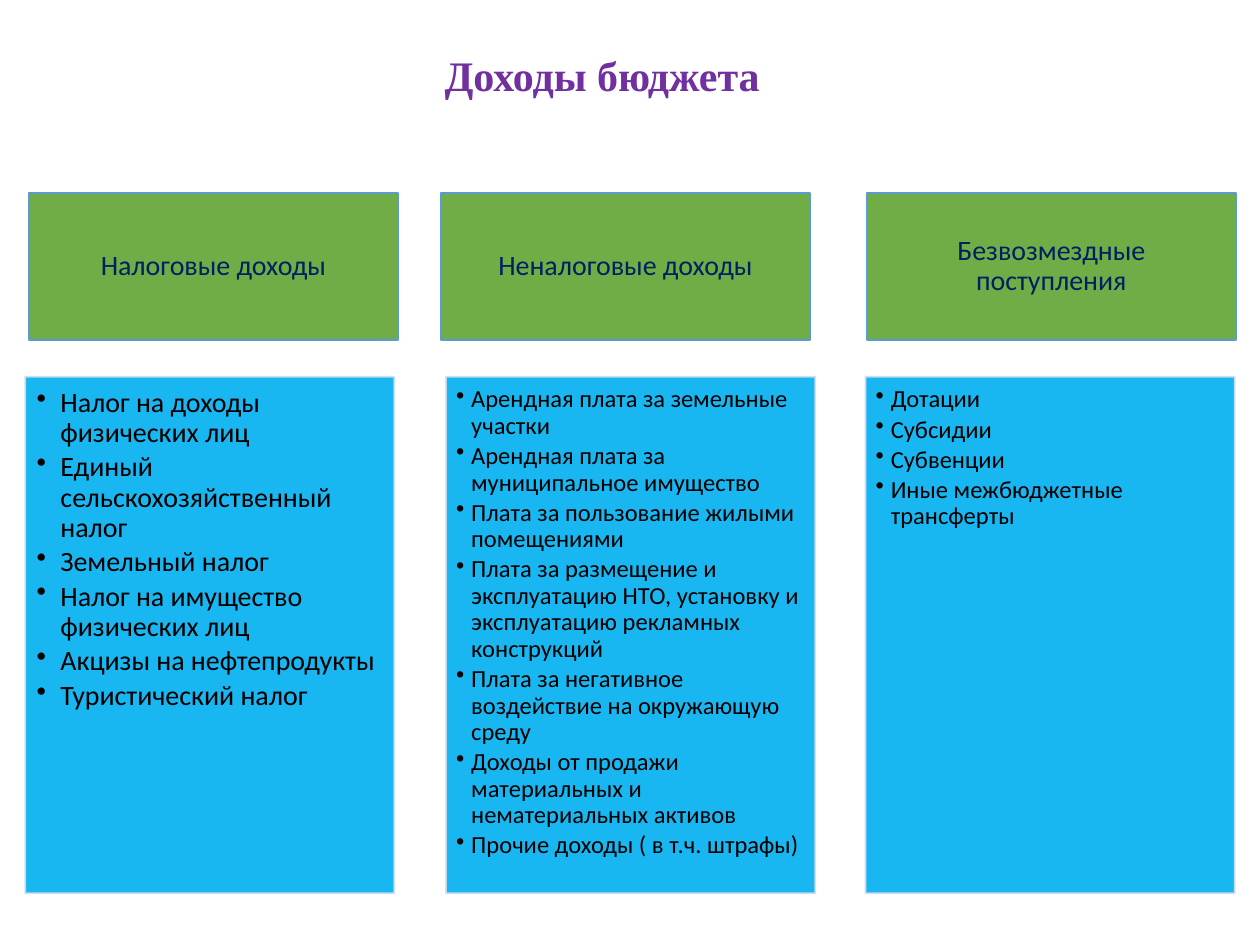
from dataclasses import dataclass

from lxml import etree
from pptx import Presentation
from pptx import util as u
from pptx.dml.color import RGBColor
from pptx.enum import shapes, text
from pptx.oxml import ns

HUES = {
    "title": "7030A0",
    "head": "70AD47",
    "edge": "5B9BD5",
    "label": "002060",
    "body": "00B0F0",
    "rim": "D2DEEF",
    "ink": "000000",
}
WIDTH = 2.93


@dataclass
class Column:
    head: str
    left: float
    inset: float
    items: list[str]
    size: int = 14
    hang: float = 0.12
    pads: tuple = (0.08, 0.08, 0.11, 0.12)


COLUMNS = [
    Column("Налоговые доходы", 0.23, 0.2, [
        "Налог на доходы физических лиц",
        "Единый сельскохозяйственный налог",
        "Земельный налог",
        "Налог на имущество физических лиц",
        "Акцизы на нефтепродукты",
        "Туристический налог",
    ], 16, 0.19, (0.09, 0.09, 0.12, 0.14)),
    Column("Неналоговые доходы", 3.5, 3.54, [
        "Арендная плата за земельные участки",
        "Арендная плата за муниципальное имущество",
        "Плата за пользование жилыми помещениями",
        "Плата за размещение и эксплуатацию НТО, установку и "
        "эксплуатацию рекламных конструкций",
        "Плата за негативное воздействие на окружающую среду",
        "Доходы от продажи материальных и нематериальных активов",
        "Прочие доходы ( в т.ч. штрафы)",
    ]),
    Column("Безвозмездные поступления", 6.88, 6.87, [
        "Дотации",
        "Субсидии",
        "Субвенции",
        "Иные межбюджетные трансферты",
    ]),
]


def tint(key: str) -> RGBColor:
    return RGBColor.from_string(HUES[key])


def style(para, face: str, size: int, hue: str, bold: bool = False) -> None:
    for run in para.runs:
        font = run.font
        font.name, font.size, font.bold = face, u.Pt(size), bold
        font.color.rgb = tint(hue)


def fade(shape) -> None:
    for color in shape._element.spPr.iter(ns.qn("a:srgbClr")):
        etree.SubElement(color, ns.qn("a:alpha"), val="90000")


def bullet(para, hang: float) -> None:
    props = para._p.get_or_add_pPr()
    props.set("marL", str(u.Inches(hang)))
    props.set("indent", str(-u.Inches(hang)))
    etree.SubElement(props, ns.qn("a:buChar"), char="•")


def panel(slide, left: float, top: float, height: float,
          fill: str, line: str, pads: tuple):
    box = slide.shapes.add_shape(
        shapes.MSO_SHAPE.RECTANGLE, u.Inches(left), u.Inches(top),
        u.Inches(WIDTH), u.Inches(height))
    box.shadow.inherit = False
    box.fill.solid()
    box.fill.fore_color.rgb = tint(fill)
    box.line.color.rgb = tint(line)
    box.line.width = u.Pt(1)
    frame = box.text_frame
    frame.word_wrap = True
    (frame.margin_left, frame.margin_top,
     frame.margin_right, frame.margin_bottom) = map(u.Inches, pads)
    return box


def draw(slide, col: Column) -> None:
    head = panel(slide, col.left, 1.53, 1.17, "head", "edge",
                 (0.12, 0.07, 0.12, 0.07))
    frame = head.text_frame
    frame.vertical_anchor = text.MSO_ANCHOR.MIDDLE
    frame.text = col.head
    para = frame.paragraphs[0]
    para.alignment = text.PP_ALIGN.CENTER
    para.line_spacing = 0.9
    style(para, "Calibri", 16, "label")

    body = panel(slide, col.inset, 2.99, 4.1, "body", "rim", col.pads)
    fade(body)
    frame = body.text_frame
    frame.vertical_anchor = text.MSO_ANCHOR.TOP
    frame.text = "\n".join(col.items)
    for para in frame.paragraphs:
        bullet(para, col.hang)
        para.level = 1
        para.alignment = text.PP_ALIGN.LEFT
        para.line_spacing = 0.9
        para.space_after = u.Pt(col.size * 0.15)
        style(para, "Calibri", col.size, "ink")


def title(slide) -> None:
    box = slide.shapes.add_textbox(
        u.Inches(3.43), u.Inches(0.34), u.Inches(3.09), u.Inches(0.5))
    frame = box.text_frame
    frame.word_wrap = False
    frame.auto_size = text.MSO_AUTO_SIZE.SHAPE_TO_FIT_TEXT
    frame.text = "Доходы бюджета"
    style(frame.paragraphs[0], "Times New Roman", 24, "title", True)


def main() -> None:
    deck = Presentation()
    deck.slide_width, deck.slide_height = u.Inches(10), u.Inches(7.5)
    slide = deck.slides.add_slide(deck.slide_layouts[6])
    title(slide)
    for col in COLUMNS:
        draw(slide, col)
    deck.save("out.pptx")


if __name__ == "__main__":
    main()
